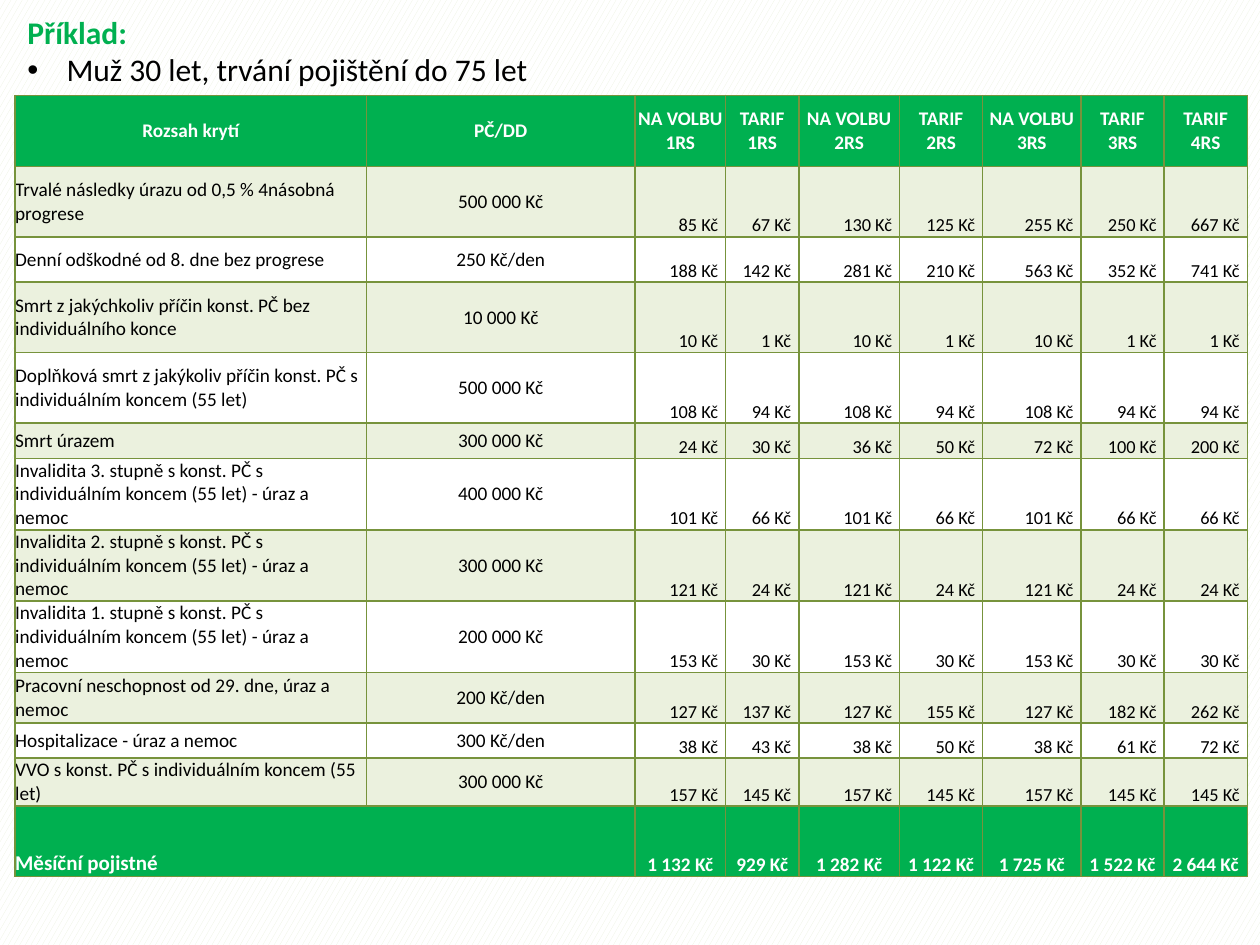
from lxml.etree import SubElement
from pptx import Presentation
from pptx.dml.color import RGBColor
from pptx.enum.dml import MSO_PATTERN
from pptx.enum.text import MSO_ANCHOR, PP_ALIGN
from pptx.oxml.ns import qn
from pptx.util import Inches, Pt

GREEN = RGBColor(0x00, 0xB0, 0x50)
PALE = RGBColor(0xEB, 0xF1, 0xDE)
WHITE = RGBColor(0xFF, 0xFF, 0xFF)
BLACK = RGBColor(0x00, 0x00, 0x00)
OLIVE = RGBColor(0x77, 0x93, 0x3C)
FONT = "Calibri"

HEADING = "Příklad:"
CASE = "Muž 30 let, trvání pojištění do 75 let"

HEADER = ["Rozsah krytí", "PČ/DD", "NA VOLBU\v1RS", "TARIF\v1RS", "NA VOLBU\v2RS",
          "TARIF\v2RS", "NA VOLBU\v3RS", "TARIF\v3RS", "TARIF\v4RS"]
DISABILITY = "Invalidita {}. stupně s konst. PČ s individuálním koncem (55 let) - úraz a nemoc"
# Row height, cover, insured sum, monthly premium of each variant in Kč
COVERS = [
    (0.56, "Trvalé následky úrazu od 0,5 % 4násobná progrese", "500 000 Kč",
     [85, 67, 130, 125, 255, 250, 667]),
    (0.36, "Denní odškodné od 8. dne bez progrese", "250 Kč/den",
     [188, 142, 281, 210, 563, 352, 741]),
    (0.56, "Smrt z jakýchkoliv příčin konst. PČ bez individuálního konce", "10 000 Kč",
     [10, 1, 10, 1, 10, 1, 1]),
    (0.56, "Doplňková smrt z jakýkoliv příčin konst. PČ s individuálním koncem (55 let)",
     "500 000 Kč", [108, 94, 108, 94, 108, 94, 94]),
    (0.28, "Smrt úrazem", "300 000 Kč", [24, 30, 36, 50, 72, 100, 200]),
    (0.56, DISABILITY.format(3), "400 000 Kč", [101, 66, 101, 66, 101, 66, 66]),
    (0.56, DISABILITY.format(2), "300 000 Kč", [121, 24, 121, 24, 121, 24, 24]),
    (0.56, DISABILITY.format(1), "200 000 Kč", [153, 30, 153, 30, 153, 30, 30]),
    (0.4, "Pracovní neschopnost od 29. dne, úraz a nemoc", "200 Kč/den",
     [127, 137, 127, 155, 127, 182, 262]),
    (0.28, "Hospitalizace - úraz a nemoc", "300 Kč/den", [38, 43, 38, 50, 38, 61, 72]),
    (0.38, "VVO s konst. PČ s individuálním koncem (55 let)", "300 000 Kč",
     [157, 145, 157, 145, 157, 145, 145]),
]
TOTAL_LABEL = "Měsíční pojistné"
TOTALS = ["1 132 Kč", "929 Kč", "1 282 Kč", "1 122 Kč", "1 725 Kč", "1 522 Kč", "2 644 Kč"]

COL_WIDTHS = [2.79, 2.13, 0.72, 0.58, 0.8, 0.66, 0.78, 0.66, 0.66]
ROW_HEIGHTS = [0.56] + [cover[0] for cover in COVERS] + [0.56]
LEFT, TABLE_TOP = 0.12, 0.76
AMOUNT_GAP = 0.06

LABEL = dict(size=Pt(11), color=BLACK, bold=False, align=PP_ALIGN.LEFT, anchor=MSO_ANCHOR.MIDDLE)
SUM = {**LABEL, "align": PP_ALIGN.CENTER}
AMOUNT = {**LABEL, "size": Pt(10.5), "align": PP_ALIGN.RIGHT, "anchor": MSO_ANCHOR.BOTTOM}
HEAD = {**SUM, "color": WHITE, "bold": True}
TOTAL = {**HEAD, "anchor": MSO_ANCHOR.BOTTOM}
TOTAL_HEAD = {**TOTAL, "size": Pt(12), "align": PP_ALIGN.LEFT}


def format_font(font, size, color, bold):
    for name, value in dict(name=FONT, size=size, bold=bold).items():
        setattr(font, name, value)
    font.color.rgb = color


def add_borders(cell):
    tc_pr = cell._tc.get_or_add_tcPr()
    for i, side in enumerate(("lnL", "lnR", "lnT", "lnB")):
        ln = tc_pr.makeelement(qn(f"a:{side}"), {"w": str(Pt(1))})
        fill = SubElement(ln, qn("a:solidFill"))
        SubElement(fill, qn("a:srgbClr"), val=str(OLIVE))
        tc_pr.insert(i, ln)


def fill_cell(cell, text, style, fill):
    cell.fill.solid()
    cell.fill.fore_color.rgb = fill
    cell.vertical_anchor = style["anchor"]
    for side in ("left", "right", "top", "bottom"):
        setattr(cell, f"margin_{side}", 0)
    if style["align"] == PP_ALIGN.RIGHT:
        cell.margin_right = Inches(AMOUNT_GAP)
    p = cell.text_frame.paragraphs[0]
    p.text = text
    p.alignment = style["align"]
    for r in p.runs:
        format_font(r.font, style["size"], style["color"], style["bold"])
    for br in p._p.findall(qn("a:br")):
        SubElement(br, qn("a:rPr"), sz=str(int(style["size"].pt * 100)))


def add_heading(s):
    tf = s.shapes.add_textbox(Inches(LEFT), Inches(0.05), Inches(5), Inches(0.71)).text_frame
    tf.word_wrap = True
    lines = [(HEADING, GREEN, True), (CASE, BLACK, False)]
    for i, (text, color, bold) in enumerate(lines):
        p = tf.add_paragraph() if i else tf.paragraphs[0]
        r = p.add_run()
        r.text = text
        format_font(r.font, Pt(18), color, bold)
    p_pr = p._p.get_or_add_pPr()
    p_pr.set("marL", str(Inches(0.31)))
    p_pr.set("indent", str(-Inches(0.31)))
    SubElement(p_pr, qn("a:buFont"), typeface="Arial")
    SubElement(p_pr, qn("a:buChar"), char="•")


def add_premium_table(s):
    rows = [(GREEN, [(text, HEAD) for text in HEADER])]
    for i, (_, cover, insured, premiums) in enumerate(COVERS):
        amounts = [(f"{premium} Kč", AMOUNT) for premium in premiums]
        rows.append((WHITE if i % 2 else PALE, [(cover, LABEL), (insured, SUM)] + amounts))
    rows.append((GREEN, [(TOTAL_LABEL, TOTAL_HEAD), ("", TOTAL)] + [(t, TOTAL) for t in TOTALS]))

    table = s.shapes.add_table(len(rows), len(COL_WIDTHS), Inches(LEFT), Inches(TABLE_TOP),
                               Inches(sum(COL_WIDTHS)), Inches(sum(ROW_HEIGHTS))).table
    table.first_row = table.horz_banding = False
    for col, width in zip(table.columns, COL_WIDTHS):
        col.width = Inches(width)
    for row, height, (fill, cells) in zip(table.rows, ROW_HEIGHTS, rows):
        row.height = Inches(height)
        for cell, (text, style) in zip(row.cells, cells):
            fill_cell(cell, text, style, fill)
            add_borders(cell)
    last = len(rows) - 1
    table.cell(last, 0).merge(table.cell(last, 1))


def main():
    prs = Presentation()
    prs.slide_width, prs.slide_height = Inches(10), Inches(7.5)
    s = prs.slides.add_slide(prs.slide_layouts[6])
    background = s.background.fill
    background.patterned()
    background.pattern = MSO_PATTERN.LARGE_CONFETTI
    background.fore_color.rgb = PALE
    background.back_color.rgb = WHITE
    add_premium_table(s)
    add_heading(s)
    prs.save("out.pptx")


if __name__ == "__main__":
    main()
